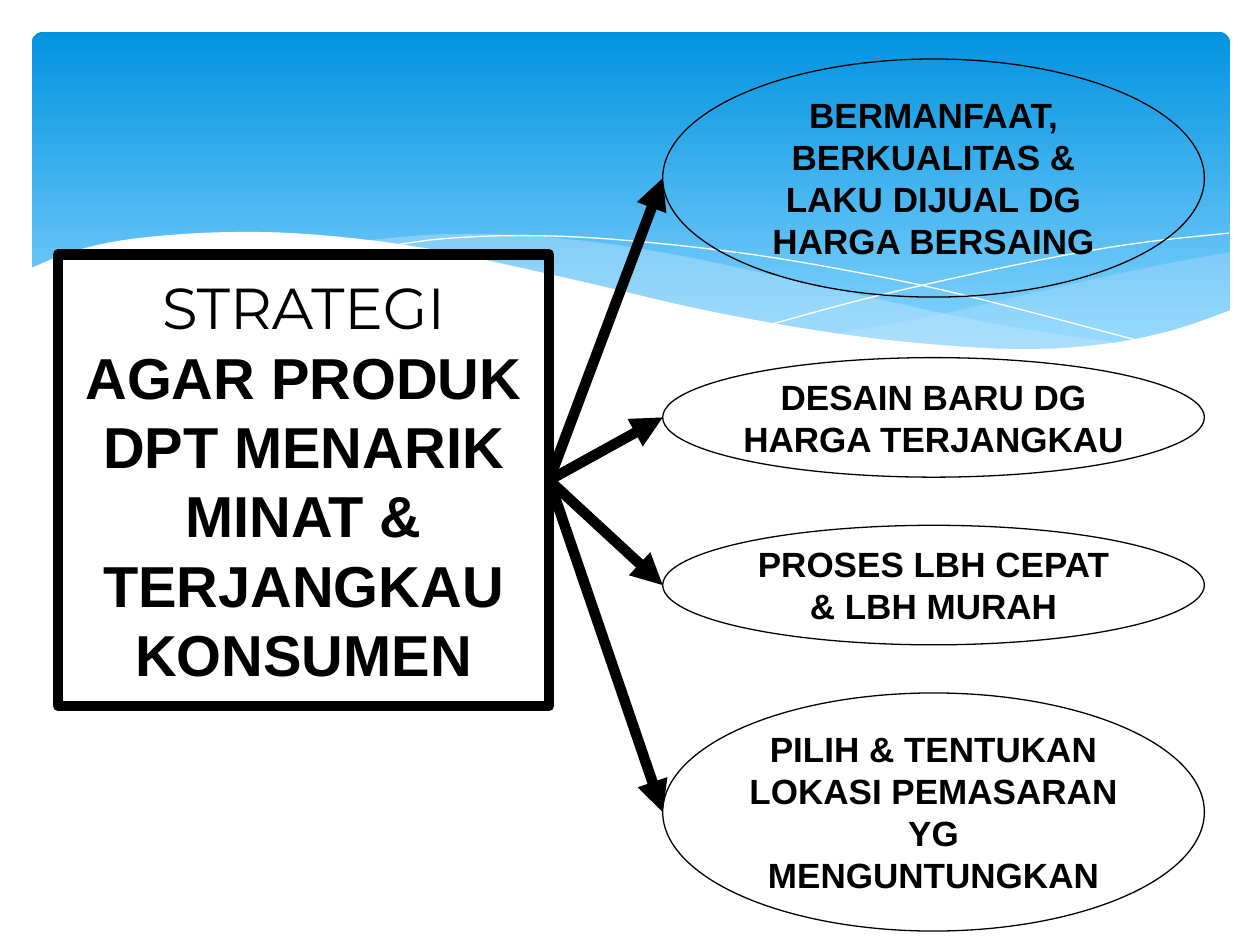
from lxml.etree import SubElement
from pptx import Presentation
from pptx.dml.color import RGBColor
from pptx.enum.shapes import MSO_CONNECTOR as Connector, MSO_SHAPE as Shape
from pptx.enum.text import MSO_ANCHOR as Anchor, PP_ALIGN as Align
from pptx.oxml.ns import qn
from pptx.util import Cm, Pt

BLACK, WHITE, MIST = "000000", "FFFFFF", "C6E7FC"

# Wave curves: points in cm from the top left corner of the band
RIGHT_TOP = [(24.16, 4.44), (22.76, 4.7), (21.23, 5.03), (19.15, 5.51),
             (17.88, 5.79), (16.15, 6.1)]
RIGHT_BOTTOM = [(16.15, 6.1), (17.27, 6.25), (18.59, 6.38), (20.04, 6.43),
                (21.51, 6.32), (22.94, 6.05), (24.16, 5.64)]
MID_TOP = [(6.63, 4.22), (8.1, 4.09), (9.5, 4.09), (11.18, 4.22), (13.11, 4.52),
           (15.34, 5), (18.19, 5.64), (19.86, 5.97), (22.05, 6.3)]
MID_BOTTOM = [(22.05, 6.3), (20.9, 6.4), (19.58, 6.43), (18.06, 6.35), (16.26, 6.12),
              (14.2, 5.77), (11.84, 5.26), (10.21, 4.85), (8.56, 4.52), (6.63, 4.22)]
FALLING = [(7.21, 4.32), (8.33, 4.17), (9.93, 4.11), (11.79, 4.19), (14.15, 4.44),
           (16.26, 4.78), (18.67, 5.28), (22.4, 6.25)]
RISING = [(14.94, 5.89), (17.02, 5.33), (19.84, 4.7), (22.1, 4.29), (24.13, 4.06)]
CREST = [(-0.05, 4.78), (0.86, 4.42), (2.06, 4.17), (3.86, 4.04), (5.72, 4.09),
         (7.98, 4.37), (10.72, 4.95), (13.46, 5.59), (15.82, 6.02), (17.81, 6.27),
         (19.91, 6.4), (21.59, 6.3), (22.99, 6.02), (24.18, 5.61)]
FLOOR = [(24.18, 7.72), (-0.05, 7.72)]

# Top and height in cm, then the wording
STRATEGIES = [
    (1.19, 4.8, "BERMANFAAT, BERKUALITAS & LAKU DIJUAL DG HARGA BERSAING"),
    (7.21, 2.41, "DESAIN BARU DG HARGA TERJANGKAU"),
    (10.59, 2.41, "PROSES LBH CEPAT & LBH MURAH"),
    (13.97, 4.8, "PILIH & TENTUKAN LOKASI PEMASARAN YG MENGUNTUNGKAN"),
]


def rgb(value):
    return RGBColor.from_string(value)


def set_attrs(obj, values):
    for name, value in values.items():
        setattr(obj, name, value)


def paint(sp, fill=None, alpha=None, line=None, width=0):
    sp.shadow.inherit = False
    if fill:
        sp.fill.solid()
        sp.fill.fore_color.rgb = rgb(fill)
        if alpha:
            color = sp.fill._xPr.find(qn("a:solidFill"))[0]
            SubElement(color, qn("a:alpha"), val=str(alpha * 1000))
    else:
        sp.fill.background()
    if line:
        sp.line.color.rgb = rgb(line)
        sp.line.width = Pt(width)
    else:
        sp.line.fill.background()


def write(sp, runs, size, anchor, inset_x=0, inset_y=0):
    """Fill a shape with one centred paragraph per (text, font, bold)."""
    tf = sp.text_frame
    set_attrs(tf, dict(word_wrap=True, vertical_anchor=anchor,
                       margin_left=Cm(inset_x), margin_right=Cm(inset_x),
                       margin_top=Cm(inset_y), margin_bottom=Cm(inset_y)))
    for i, (text, font, bold) in enumerate(runs):
        p = tf.add_paragraph() if i else tf.paragraphs[0]
        p.alignment = Align.CENTER
        r = p.add_run()
        r.text = text
        set_attrs(r.font, dict(name=font, size=Pt(size), bold=bold))
        r.font.color.rgb = rgb(BLACK)


def smooth(points, steps=5):
    """Catmull-Rom curve through the points."""
    padded = [points[0], *points, points[-1]]
    curve = [points[0]]
    for a, b, c, d in zip(padded, padded[1:], padded[2:], padded[3:]):
        for t in (n / steps for n in range(1, steps + 1)):
            curve.append(tuple(
                (2 * q + (r - p) * t + (2 * p - 5 * q + 4 * r - s) * t ** 2
                 + (3 * q - p - 3 * r + s) * t ** 3) / 2
                for p, q, r, s in zip(a, b, c, d)))
    return curve


def add_outline(s, left, top, points, close, **style):
    start, *rest = [(Cm(left + x), Cm(top + y)) for x, y in points]
    builder = s.shapes.build_freeform(*start)
    builder.add_line_segments(rest, close=close)
    paint(builder.convert_to_shape(), **style)


def add_wave_band(s, left, top, width, height):
    # Gradient panel
    sp = s.shapes.add_shape(Shape.ROUNDED_RECTANGLE,
                            Cm(left), Cm(top), Cm(width), Cm(height))
    sp.adjustments[0] = 0.034
    paint(sp)
    sp.fill.gradient()
    sp.fill.gradient_angle = 270
    stops = [(0, "0293E0"), (0.9, "83D3FE")]
    for stop, (position, color) in zip(sp.fill.gradient_stops, stops):
        stop.position = position
        stop.color.rgb = rgb(color)

    # Pale waves, thin lines and the white crest
    for points, close, style in [
        (smooth(RIGHT_TOP) + smooth(RIGHT_BOTTOM), True, dict(fill=MIST, alpha=29)),
        (smooth(MID_TOP) + smooth(MID_BOTTOM), True, dict(fill=MIST, alpha=40)),
        (smooth(FALLING), False, dict(line=WHITE)),
        (smooth(RISING), False, dict(line=WHITE)),
        (smooth(CREST) + FLOOR, True, dict(fill=WHITE)),
    ]:
        add_outline(s, left, top, points, close, **style)


def add_goal_box(s, left, top, width, height):
    sp = s.shapes.add_shape(Shape.RECTANGLE, Cm(left), Cm(top), Cm(width), Cm(height))
    paint(sp, line=BLACK, width=6)
    write(sp, [("STRATEGI", "Montserrat", False),
               ("AGAR PRODUK DPT MENARIK MINAT & TERJANGKAU KONSUMEN", "Arial", True)],
          33, Anchor.MIDDLE, 0.2, 0.3)
    return sp


def add_strategies(s, left, width):
    ovals = []
    for top, height, text in STRATEGIES:
        sp = s.shapes.add_shape(Shape.OVAL, Cm(left), Cm(top), Cm(width), Cm(height))
        paint(sp, line=BLACK, width=0.75)
        write(sp, [(text, "Arial", True)], 20, Anchor.TOP)
        ovals.append(sp)
    return ovals


def add_arrow(s, source, target):
    """Arrow from the right side of source to the left side of target."""
    cn = s.shapes.add_connector(
        Connector.STRAIGHT,
        source.left + source.width, source.top + source.height // 2,
        target.left, target.top + target.height // 2)
    cn.line.color.rgb = rgb(BLACK)
    cn.line.width = Pt(6)
    SubElement(cn.line._get_or_add_ln(), qn("a:tailEnd"), type="triangle")
    SubElement(cn._element.spPr, qn("a:effectLst"))


def main():
    prs = Presentation()
    prs.slide_width, prs.slide_height = Cm(25.4), Cm(19.05)
    s = prs.slides.add_slide(prs.slide_layouts[6])
    add_wave_band(s, 0.64, 0.64, 24.16, 6.86)
    goal = add_goal_box(s, 1.17, 5.13, 9.9, 9.1)
    for oval in add_strategies(s, 13.36, 10.92):
        add_arrow(s, goal, oval)
    prs.save("out.pptx")


if __name__ == "__main__":
    main()
